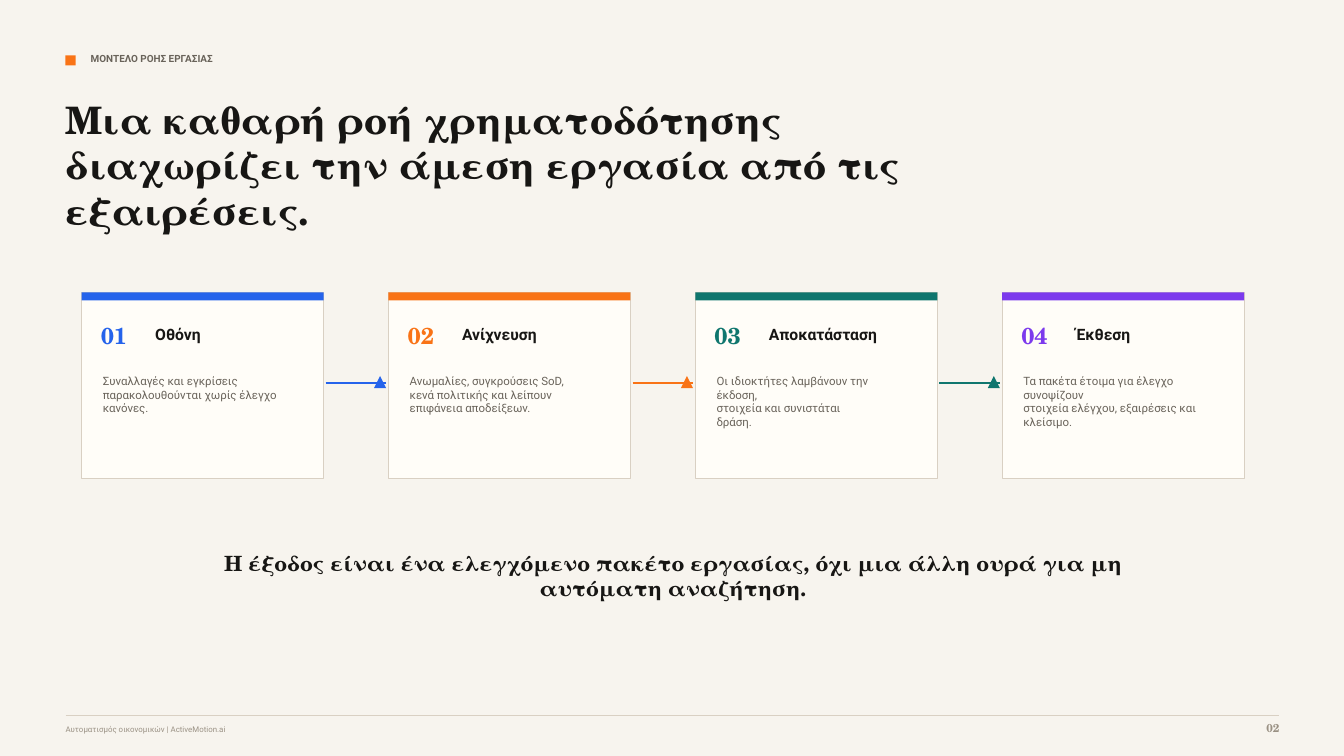
from typing import NamedTuple

from lxml import etree
from pptx import Presentation
from pptx.dml.color import RGBColor
from pptx.enum.shapes import MSO_CONNECTOR, MSO_SHAPE
from pptx.enum.text import PP_ALIGN
from pptx.oxml.ns import qn
from pptx.util import Inches, Pt

RECT = MSO_SHAPE.RECTANGLE
TRIANGLE = MSO_SHAPE.ISOSCELES_TRIANGLE
STRAIGHT = MSO_CONNECTOR.STRAIGHT
LEFT, CENTER, RIGHT = PP_ALIGN.LEFT, PP_ALIGN.CENTER, PP_ALIGN.RIGHT

SANS, SERIF = "Roboto", "TeX Gyre Schola"
PAPER, CARD, RULE = "F7F4EE", "FFFDF8", "D9D0C3"
INK, GREY, FAINT = "171614", "69635A", "9A9184"
BLUE, ORANGE, GREEN, PURPLE = "2563EB", "F97316", "0F766E", "7C3AED"

WIDE, HIGH = 13.33, 7.5
MARGIN = 0.65
FIRST, LAST, TOP = 0.81, 9.94, 2.9
CARD_W, CARD_H = 2.4, 1.85


class Step(NamedTuple):
    name: str
    color: str
    lines: list[str]


STEPS = [
    Step("Οθόνη", BLUE, [
        "Συναλλαγές και εγκρίσεις",
        "παρακολουθούνται χωρίς έλεγχο",
        "κανόνες."]),
    Step("Ανίχνευση", ORANGE, [
        "Ανωμαλίες, συγκρούσεις SoD,",
        "κενά πολιτικής και λείπουν",
        "επιφάνεια αποδείξεων."]),
    Step("Αποκατάσταση", GREEN, [
        "Οι ιδιοκτήτες λαμβάνουν την έκδοση,",
        "στοιχεία και συνιστάται",
        "δράση."]),
    Step("Έκθεση", PURPLE, [
        "Τα πακέτα έτοιμα για έλεγχο συνοψίζουν",
        "στοιχεία ελέγχου, εξαιρέσεις και",
        "κλείσιμο."]),
]
PITCH = (LAST - FIRST) / (len(STEPS) - 1)


def rgb(code: str) -> RGBColor:
    return RGBColor.from_string(code)


def add_block(slide, x: float, y: float, w: float, h: float, fill: str,
              line: str = "", kind=RECT) -> None:
    shape = slide.shapes.add_shape(kind, Inches(x), Inches(y), Inches(w), Inches(h))
    shape.shadow.inherit = False
    shape.fill.solid()
    shape.fill.fore_color.rgb = rgb(fill)
    if line:
        shape.line.color.rgb = rgb(line)
        shape.line.width = Pt(0.75)
    else:
        shape.line.fill.background()


def add_rule(slide, x: float, y: float, w: float, color: str, weight: float) -> None:
    """Draw a level line of width w."""
    rule = slide.shapes.add_connector(
        STRAIGHT, Inches(x), Inches(y), Inches(x + w), Inches(y))
    rule.line.color.rgb = rgb(color)
    rule.line.width = Pt(weight)
    etree.SubElement(rule._element.spPr, qn("a:effectLst"))


def add_text(slide, lines: list[str], x: float, y: float, w: float, h: float, *,
             size: float, color: str = INK, font: str = SANS,
             bold: bool = True, align=LEFT) -> None:
    frame = slide.shapes.add_textbox(
        Inches(x), Inches(y), Inches(w), Inches(h)).text_frame
    frame.word_wrap = True
    frame.margin_left = frame.margin_right = 0
    frame.margin_top = frame.margin_bottom = 0
    for i, line in enumerate(lines):
        para = frame.paragraphs[0] if i == 0 else frame.add_paragraph()
        para.alignment = align
        run = para.add_run()
        run.text = line
        run.font.size = Pt(size)
        run.font.name = font
        run.font.bold = bold
        run.font.color.rgb = rgb(color)


def add_card(slide, x: float, num: int, step: Step) -> None:
    add_block(slide, x, TOP, CARD_W, CARD_H, CARD, line=RULE)
    add_block(slide, x, TOP, CARD_W, 0.08, step.color)
    add_text(slide, [f"{num:02}"], x + 0.19, TOP + 0.29, 0.46, 0.29,
             size=16.5, color=step.color, font=SERIF)
    add_text(slide, [step.name], x + 0.73, TOP + 0.32, 1.33, 0.21, size=11.2)
    add_text(slide, step.lines, x + 0.21, TOP + 0.81, 1.92, 0.71,
             size=8.2, color=GREY, bold=False)


def add_arrow(slide, x: float, color: str) -> None:
    add_rule(slide, x, TOP + 0.9, 0.6, color, 1.75)
    add_block(slide, x + 0.48, TOP + 0.83, 0.12, 0.12, color, kind=TRIANGLE)


def main() -> None:
    deck = Presentation()
    deck.slide_width, deck.slide_height = Inches(WIDE), Inches(HIGH)
    slide = deck.slides.add_slide(deck.slide_layouts[6])

    add_block(slide, 0, 0, WIDE, HIGH, PAPER)
    add_block(slide, MARGIN, 0.55, 0.1, 0.1, ORANGE)
    add_text(slide, ["ΜΟΝΤΕΛΟ ΡΟΗΣ ΕΡΓΑΣΙΑΣ"], 0.9, 0.52, 5.83, 0.19,
             size=7.1, color=GREY)
    add_text(slide, ["Μια καθαρή ροή χρηματοδότησης διαχωρίζει την άμεση "
                     "εργασία από τις εξαιρέσεις."],
             MARGIN, 0.96, 9.38, 1.08, size=27, font=SERIF)

    for i, step in enumerate(STEPS):
        x = FIRST + i * PITCH
        add_card(slide, x, i + 1, step)
        if i < len(STEPS) - 1:
            add_arrow(slide, x + CARD_W + 0.02, step.color)

    add_text(slide, ["Η έξοδος είναι ένα ελεγχόμενο πακέτο εργασίας, όχι μια "
                     "άλλη ουρά για μη αυτόματη αναζήτηση."],
             1.83, 5.46, 9.69, 0.44, size=15, font=SERIF, align=CENTER)

    add_rule(slide, MARGIN, 7.1, 12.04, RULE, 0.75)
    add_text(slide, ["Αυτοματισμός οικονομικών | ActiveMotion.ai"],
             MARGIN, 7.19, 7.92, 0.15, size=5.6, color=FAINT, bold=False)
    add_text(slide, ["02"], 12.19, 7.15, 0.5, 0.19,
             size=8.2, color=FAINT, font=SERIF, align=RIGHT)
    deck.save("out.pptx")


if __name__ == "__main__":
    main()
